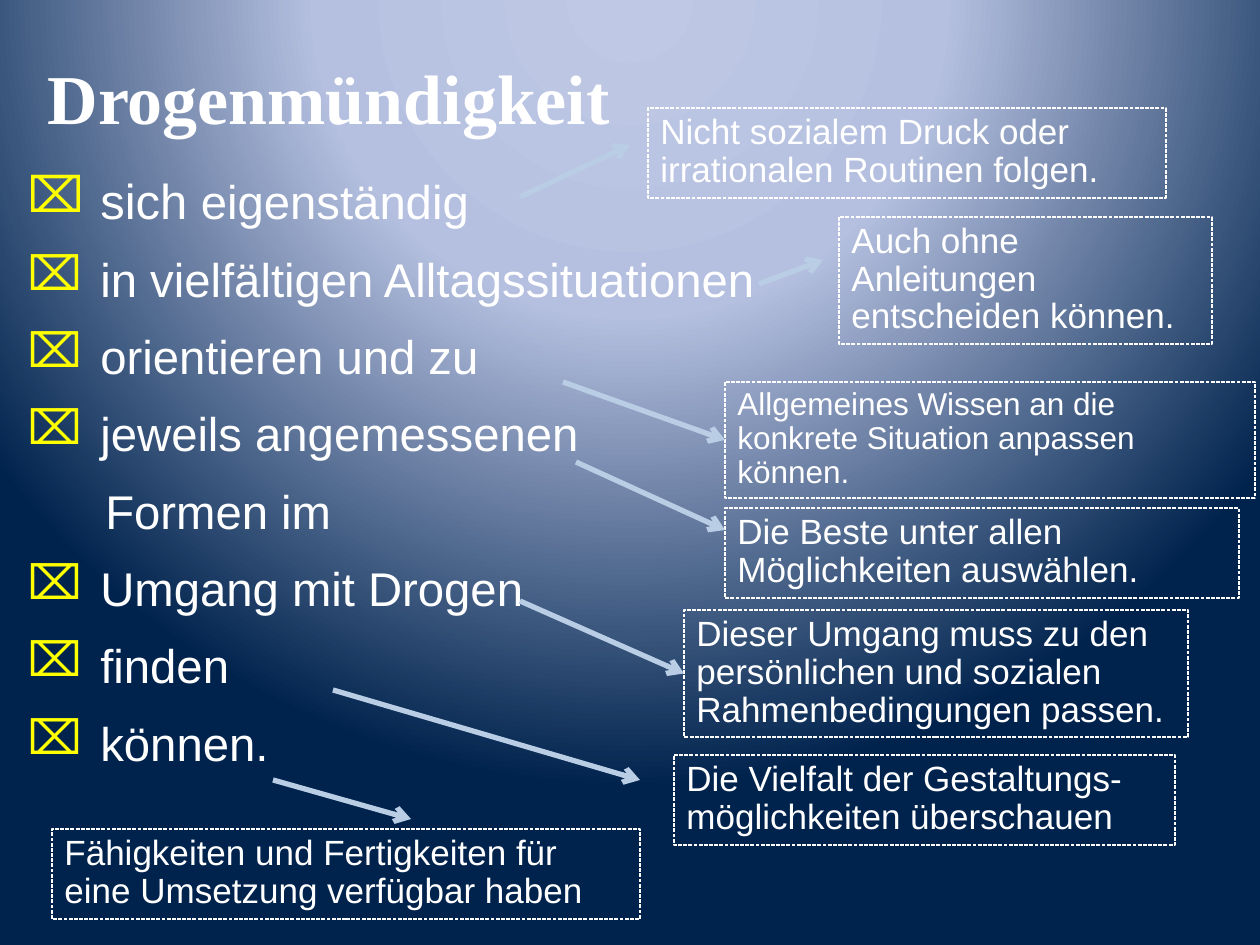
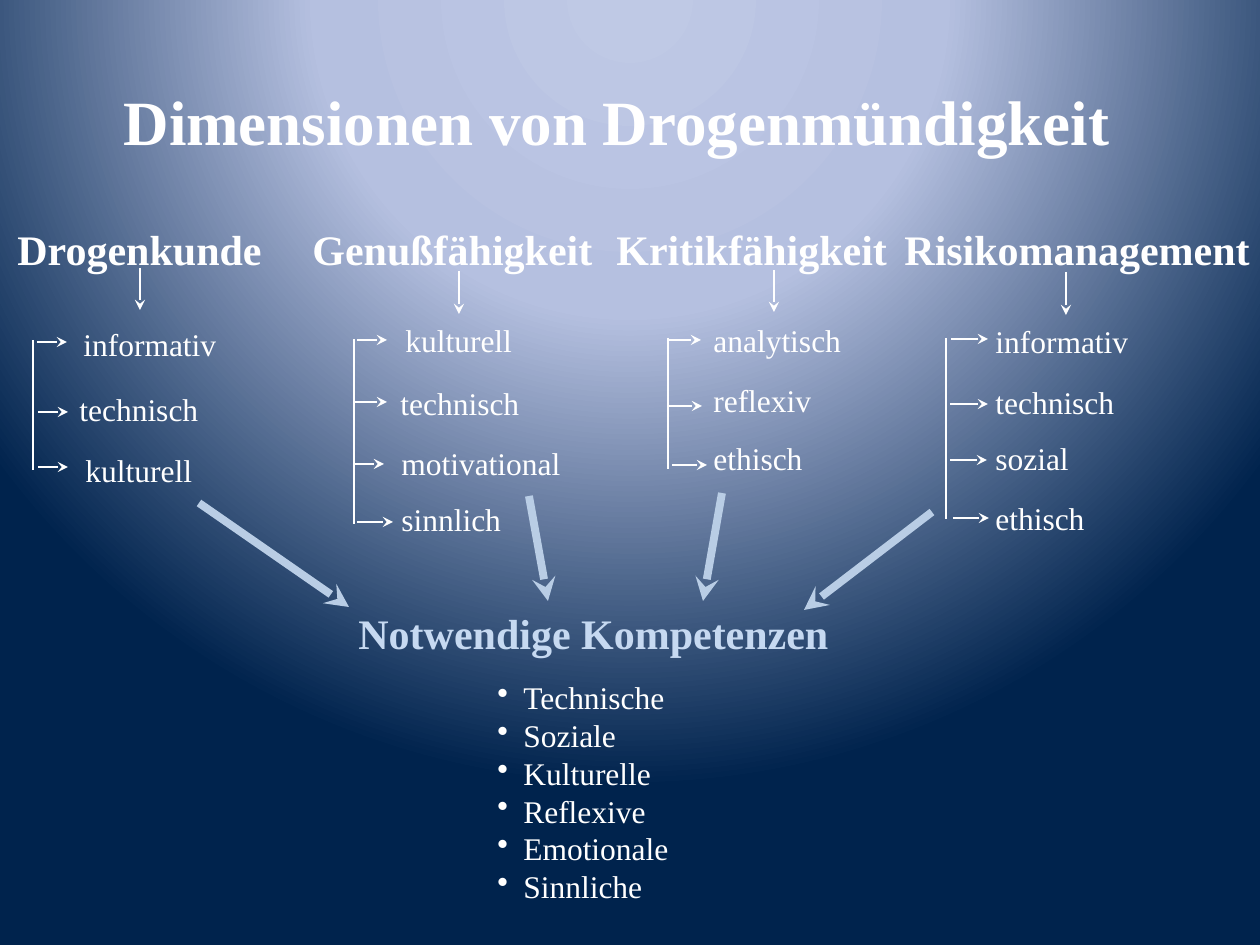
from dataclasses import dataclass
from typing import Any, NamedTuple, Optional, Sequence

from lxml.etree import SubElement
from pptx import Presentation
from pptx.dml.color import RGBColor
from pptx.enum.dml import MSO_LINE
from pptx.enum.shapes import MSO_CONNECTOR, MSO_SHAPE
from pptx.enum.text import MSO_ANCHOR, MSO_AUTO_SIZE, PP_ALIGN
from pptx.oxml import parse_xml
from pptx.oxml.ns import nsdecls, qn
from pptx.shapes.autoshape import Shape
from pptx.shapes.connector import Connector
from pptx.slide import Slide, SlideMaster
from pptx.text.text import TextFrame
from pptx.util import Emu, Pt

EMU_PER_PX = 914400 / 126
WHITE = "FFFFFF"
YELLOW = "FFFF00"
PALE_BLUE = "B9CDE5"
SKY = "C6D9F1"
BACKDROP = ((0, "BFC9E5"), (40, "B5C0E0"), (100, "00234D"))
SERIF = "Times New Roman"
SANS = "Arial"
LEFT_SIDE = 1
HEADING_TOP, HEADING_HEIGHT, LABEL_HEIGHT = 217, 64, 50


class Point(NamedTuple):
    x: int
    y: int


class Box(NamedTuple):
    left: int
    top: int
    width: int
    height: int


@dataclass(frozen=True)
class Style:
    size: int
    font: str = SERIF
    color: str = WHITE
    bold: bool = False
    line_spacing: Optional[float] = None
    gap: int = 0


@dataclass(frozen=True)
class Bullet:
    char: str
    hanging: int
    color: str


@dataclass(frozen=True)
class Stroke:
    color: str
    width: float
    head: Optional[str] = None


@dataclass(frozen=True)
class Note:
    text: str
    box: Box
    start: Point
    end: Optional[Point]
    size: int = 20


class Aspect(NamedTuple):
    label: str
    left: int
    top: int
    arrow_left: int
    arrow_right: int
    arrow_y: int


@dataclass(frozen=True)
class Dimension:
    heading: str
    left: int
    width: int
    stem: tuple[Point, Point]
    spine: tuple[Point, Point]
    flow: tuple[Point, Point]
    aspects: tuple[Aspect, ...]


HEADING = Style(24, bold=True)
LABEL = Style(18)
CONCEPT = Style(27, SANS, line_spacing=0.9, gap=15)
CHECK = Bullet("⌧", 73, YELLOW)
DOT = Bullet("•", 26, WHITE)
NOTE_ARROW = Stroke(PALE_BLUE, 3, "arrow")
FLOW = Stroke(PALE_BLUE, 4.5, "stealth")
SPINE = Stroke(WHITE, 1)
BRANCH = Stroke(WHITE, 1, "stealth")

CONCEPTS = (
    ("sich ", "eigenständig"),
    ("in vielfältigen Alltagssituationen",),
    ("orientieren und zu",),
    ("jeweils angemessenen",),
    ("Formen im",),
    ("Umgang mit Drogen",),
    ("finden",),
    ("können.",),
)
CONTINUED_LINE = 4
CONTINUED_MARGIN = 78

NOTES = (
    Note("Nicht sozialem Druck oder irrationalen Routinen folgen.",
         Box(648, 108, 518, 90), Point(520, 197), Point(630, 145)),
    Note("Auch ohne Anleitungen entscheiden können.",
         Box(839, 217, 373, 127), Point(759, 284), Point(823, 260)),
    Note("Allgemeines Wissen an die konkrete Situation anpassen können.",
         Box(725, 382, 530, 116), Point(563, 382), None, 18),
    Note("Die Beste unter allen Möglichkeiten auswählen.",
         Box(725, 508, 514, 90), Point(576, 462), Point(725, 530)),
    Note("Dieser Umgang muss zu den persönlichen und sozialen Rahmenbedingungen passen.",
         Box(684, 610, 504, 127), Point(520, 601), None),
    Note("Die Vielfalt der Gestaltungs-möglichkeiten überschauen",
         Box(674, 755, 501, 90), Point(333, 690), Point(640, 780)),
    Note("Fähigkeiten und Fertigkeiten für eine Umsetzung verfügbar haben",
         Box(52, 829, 588, 90), Point(273, 780), Point(411, 819)),
)

LABEL_WIDTHS = {
    "informativ": 160, "technisch": 146, "kulturell": 134, "motivational": 186,
    "sinnlich": 126, "analytisch": 155, "reflexiv": 125, "ethisch": 116, "sozial": 100,
}
DIMENSIONS = (
    Dimension("Drogenkunde", 5, 291, (Point(140, 268), Point(140, 310)),
              (Point(33, 340), Point(33, 470)), (Point(199, 503), Point(349, 607)),
              (Aspect("informativ", 71, 319, 37, 67, 342),
               Aspect("technisch", 67, 384, 38, 68, 412),
               Aspect("kulturell", 73, 445, 38, 68, 467))),
    Dimension("Genußfähigkeit", 300, 309, (Point(459, 271), Point(459, 314)),
              (Point(354, 339), Point(354, 524)), (Point(529, 496), Point(548, 601)),
              (Aspect("kulturell", 393, 315, 357, 387, 340),
               Aspect("technisch", 388, 378, 355, 387, 402),
               Aspect("motivational", 389, 438, 354, 384, 464),
               Aspect("sinnlich", 389, 494, 357, 393, 522))),
    Dimension("Kritikfähigkeit", 604, 299, (Point(774, 270), Point(774, 312)),
              (Point(668, 338), Point(668, 469)), (Point(722, 493), Point(703, 601)),
              (Aspect("analytisch", 701, 315, 669, 701, 340),
               Aspect("reflexiv", 701, 375, 668, 702, 406),
               Aspect("ethisch", 701, 433, 672, 707, 465))),
    Dimension("Risikomanagement", 892, 374, (Point(1066, 272), Point(1066, 315)),
              (Point(946, 338), Point(946, 519)), (Point(932, 512), Point(804, 610)),
              (Aspect("informativ", 983, 316, 951, 988, 339),
               Aspect("technisch", 983, 377, 950, 988, 404),
               Aspect("sozial", 983, 433, 950, 987, 460),
               Aspect("ethisch", 983, 493, 953, 989, 518))),
)
COMPETENCES = ("Technische", "Soziale", "Kulturelle", "Reflexive", "Emotionale", "Sinnliche")


def px(length: int) -> Emu:
    return Emu(round(length * EMU_PER_PX))


def color(code: str) -> RGBColor:
    return RGBColor.from_string(code)


def assign(target: Any, values: dict[str, Any]) -> None:
    for name, value in values.items():
        setattr(target, name, value)


def paint_backdrop(master: SlideMaster) -> None:
    master.background.fill.solid()
    solid = next(master._element.iter(qn("a:solidFill")))
    stops = "".join(
        f'<a:gs pos="{percent * 1000}"><a:srgbClr val="{code}"/></a:gs>'
        for percent, code in BACKDROP
    )
    gradient = parse_xml(
        f'<a:gradFill {nsdecls("a")} rotWithShape="1"><a:gsLst>{stops}</a:gsLst>'
        '<a:path path="circle"><a:fillToRect l="50000" t="-80000" r="50000" b="180000"/>'
        "</a:path></a:gradFill>"
    )
    solid.getparent().replace(solid, gradient)


def write(frame: TextFrame, lines: Sequence[Sequence[str]], style: Style, wrap: bool) -> None:
    assign(frame, {"word_wrap": wrap, "auto_size": MSO_AUTO_SIZE.SHAPE_TO_FIT_TEXT,
                   "vertical_anchor": MSO_ANCHOR.TOP})
    for index, pieces in enumerate(lines):
        paragraph = frame.add_paragraph() if index else frame.paragraphs[0]
        assign(paragraph, {"alignment": PP_ALIGN.LEFT, "line_spacing": style.line_spacing,
                           "space_before": Pt(style.gap if index else 0)})
        for piece in pieces:
            run = paragraph.add_run()
            run.text = piece
            assign(run.font, {"name": style.font, "size": Pt(style.size), "bold": style.bold})
            run.font.color.rgb = color(style.color)


def add_bullet(paragraph: Any, bullet: Bullet) -> None:
    properties = paragraph._p.get_or_add_pPr()
    properties.set("marL", str(px(bullet.hanging)))
    properties.set("indent", str(-px(bullet.hanging)))
    tint = SubElement(properties, qn("a:buClr"))
    SubElement(tint, qn("a:srgbClr"), val=bullet.color)
    SubElement(properties, qn("a:buChar"), char=bullet.char)


def add_text(slide: Slide, box: Box, lines: Sequence[Sequence[str]], style: Style,
             wrap: bool = False) -> TextFrame:
    frame = slide.shapes.add_textbox(*map(px, box)).text_frame
    write(frame, lines, style, wrap)
    return frame


def set_title(slide: Slide, box: Box, text: str, size: int) -> None:
    title = slide.shapes.title
    assign(title, {name: px(length) for name, length in box._asdict().items()})
    write(title.text_frame, [(text,)], Style(size, bold=True), False)


def add_line(slide: Slide, start: Point, end: Point, stroke: Stroke) -> Connector:
    line = slide.shapes.add_connector(MSO_CONNECTOR.STRAIGHT, *map(px, (*start, *end)))
    line.line.width = Pt(stroke.width)
    line.line.color.rgb = color(stroke.color)
    if stroke.head:
        SubElement(line.line._get_or_add_ln(), qn("a:tailEnd"), type=stroke.head)
    SubElement(line._element.spPr, qn("a:effectLst"))
    return line


def add_note(slide: Slide, note: Note) -> Shape:
    frame = slide.shapes.add_shape(MSO_SHAPE.RECTANGLE, *map(px, note.box))
    frame.shadow.inherit = False
    frame.fill.background()
    frame.line.color.rgb = color(WHITE)
    assign(frame.line, {"width": Pt(0.75), "dash_style": MSO_LINE.SQUARE_DOT})
    write(frame.text_frame, [(note.text,)], Style(note.size, SANS, line_spacing=0.9), True)
    return frame


def build_definition(slide: Slide) -> None:
    set_title(slide, Box(35, 48, 593, 97), "Drogenmündigkeit", 40)
    concepts = add_text(slide, Box(15, 171, 791, 627), CONCEPTS, CONCEPT, True)
    concepts.paragraphs[0].runs[0].font.size = Pt(28)
    for index, paragraph in enumerate(concepts.paragraphs):
        if index == CONTINUED_LINE:
            paragraph._p.get_or_add_pPr().set("marL", str(px(CONTINUED_MARGIN)))
        else:
            add_bullet(paragraph, CHECK)
    for note in NOTES:
        frame = add_note(slide, note)
        side = Point(note.box.left, note.box.top + note.box.height // 2)
        arrow = add_line(slide, note.start, note.end or side, NOTE_ARROW)
        if note.end is None:
            arrow.end_connect(frame, LEFT_SIDE)


def add_dimension(slide: Slide, dimension: Dimension) -> None:
    heading = Box(dimension.left, HEADING_TOP, dimension.width, HEADING_HEIGHT)
    add_text(slide, heading, [(dimension.heading,)], HEADING, True)
    add_line(slide, *dimension.stem, BRANCH)
    add_line(slide, *dimension.spine, SPINE)
    for aspect in dimension.aspects:
        box = Box(aspect.left, aspect.top, LABEL_WIDTHS[aspect.label], LABEL_HEIGHT)
        add_text(slide, box, [(aspect.label,)], LABEL)
        add_line(slide, Point(aspect.arrow_left, aspect.arrow_y),
                 Point(aspect.arrow_right, aspect.arrow_y), BRANCH)
    add_line(slide, *dimension.flow, FLOW)


def build_dimensions(slide: Slide) -> None:
    set_title(slide, Box(111, 76, 1037, 89), "Dimensionen von Drogenmündigkeit", 36)
    for dimension in DIMENSIONS:
        add_dimension(slide, dimension)
    add_text(slide, Box(346, 601, 500, HEADING_HEIGHT), [("Notwendige Kompetenzen",)],
             Style(24, color=SKY, bold=True))
    competences = add_text(slide, Box(485, 672, 199, 242),
                           [(name,) for name in COMPETENCES], LABEL)
    for paragraph in competences.paragraphs:
        add_bullet(paragraph, DOT)


def main() -> None:
    deck = Presentation()
    assign(deck, {"slide_width": px(1260), "slide_height": px(945)})
    paint_backdrop(deck.slide_master)
    title_only = deck.slide_layouts[5]
    for build in (build_definition, build_dimensions):
        build(deck.slides.add_slide(title_only))
    deck.save("out.pptx")


if __name__ == "__main__":
    main()
